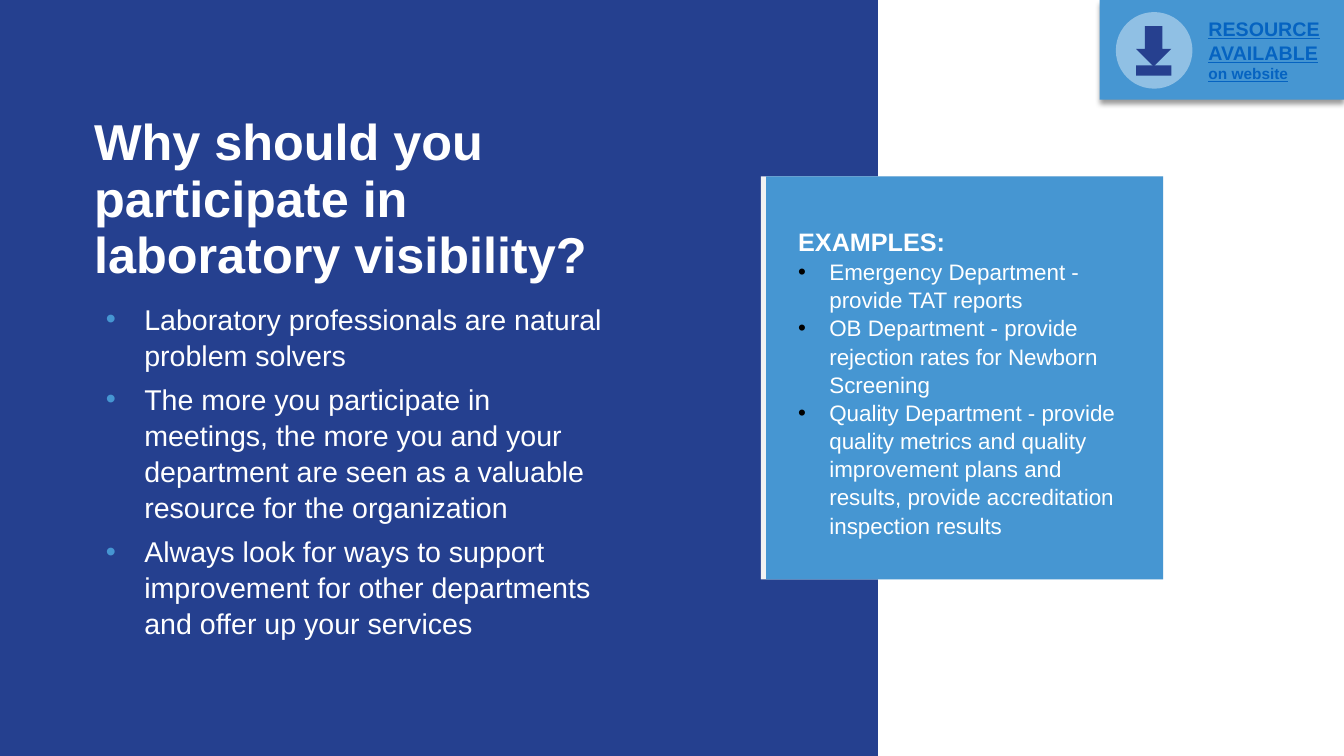
from dataclasses import dataclass
from lxml.etree import SubElement
from pptx import Presentation
from pptx.dml.color import RGBColor as Rgb
from pptx.enum.shapes import MSO_SHAPE as Kind
from pptx.enum.text import MSO_ANCHOR as Anchor
from pptx.oxml.ns import qn
from pptx.util import Inches, Pt


@dataclass(frozen=True)
class Theme:
    font: str = "Arial"
    navy: str = "25408F"
    icon: str = "26408F"
    sky: str = "4696D2"
    pale: str = "90C0E4"
    gray: str = "F2F2F2"
    white: str = "FFFFFF"
    black: str = "000000"
    link: str = "0563C1"
    title: float = 36
    body: float = 20.4
    head: float = 18
    item: float = 16
    tag: float = 14
    note: float = 11


class Deck:
    cols = 40

    def __init__(self, theme):
        self.theme = theme
        self.prs = Presentation()
        self.prs.slide_width = Inches(13.33)
        self.prs.slide_height = Inches(7.5)
        self.unit = self.prs.slide_width / self.cols
        self.slide = self.prs.slides.add_slide(self.prs.slide_layouts[5])
        self.host = self.slide.shapes

    def place(self, box):
        return [round(n * self.unit) for n in box]

    def style(self, run, size, color, bold=False, under=None):
        font = run.font
        font.name, font.size = self.theme.font, Pt(size)
        font.bold, font.underline = bold, under
        font.color.rgb = Rgb.from_string(color)

    def shape(self, kind, box, color):
        item = self.host.add_shape(kind, *self.place(box))
        item.shadow.inherit = False
        item.fill.solid()
        item.fill.fore_color.rgb = Rgb.from_string(color)
        item.line.fill.background()
        return item

    def shade(self, item):
        effects = item._element.spPr.find(qn("a:effectLst"))
        cast = SubElement(effects, qn("a:outerShdw"), blurRad=str(Pt(4)),
                          dist=str(Pt(3)), dir="5400000", rotWithShape="0")
        tint = SubElement(cast, qn("a:srgbClr"), val=self.theme.black)
        SubElement(tint, qn("a:alpha"), val="40000")

    def title(self, box, text):
        item = self.slide.shapes.title
        item.left, item.top, item.width, item.height = self.place(box)
        self.slide.shapes._spTree.append(item._element)
        frame = item.text_frame
        frame.text, frame.word_wrap = text, True
        frame.vertical_anchor = Anchor.MIDDLE
        para = frame.paragraphs[0]
        para.line_spacing = 0.94
        para._p.get_or_add_pPr().set("algn", "l")
        self.style(para.runs[0], self.theme.title, self.theme.white, True)

    def text(self, box, lines, anchor=Anchor.TOP):
        frame = self.host.add_textbox(*self.place(box)).text_frame
        frame.word_wrap = True
        frame.vertical_anchor = anchor
        frame.text = "\n".join(lines)
        return frame.paragraphs

    def bullet(self, para, left, hang, color):
        props = para._p.get_or_add_pPr()
        props.set("marL", str(Inches(left)))
        props.set("indent", str(-Inches(hang)))
        SubElement(SubElement(props, qn("a:buClr")), qn("a:srgbClr"), val=color)
        SubElement(props, qn("a:buFont"), typeface=self.theme.font)
        SubElement(props, qn("a:buChar"), char="•")

    def items(self, paras, size, left, hang, color):
        for para in paras:
            self.bullet(para, left, hang, color)
            para.line_spacing = 1.05
            self.style(para.runs[0], size, self.theme.white)


def main():
    look = Theme()
    deck = Deck(look)
    deck.shape(Kind.RECTANGLE, (0, 0, 26.13, 22.51), look.navy)
    deck.shape(Kind.RECTANGLE, (22.65, 5.25, 11.97, 12), look.gray)
    deck.shape(Kind.RECTANGLE, (22.8, 5.25, 11.82, 12), look.sky)

    deck.title((2.5, 3.78, 16.15, 4.35),
               "Why should you participate in laboratory visibility?")
    points = deck.text((2.5, 8.37, 16.15, 11.25), [
        "Laboratory professionals are natural problem solvers",
        "The more you participate in meetings, the more you and your "
        "department are seen as a valuable resource for the organization",
        "Always look for ways to support improvement for other departments "
        "and offer up your services"], Anchor.MIDDLE)
    deck.items(points, look.body, 0.5, 0.38, look.sky)
    for para in points[1:]:
        para.space_before = Pt(6)

    deck.host = deck.slide.shapes.add_group_shape().shapes
    deck.shade(deck.shape(Kind.RECTANGLE, (32.73, 0, 7.27, 2.97), look.sky))
    label = deck.text((35.67, 0.36, 4.05, 2.28),
                      ["RESOURCE AVAILABLE\von website"])[0]
    for run, size in zip(label.runs, (look.tag, look.note)):
        deck.style(run, size, look.link, True, True)
    deck.shape(Kind.OVAL, (33.21, 0.36, 2.28, 2.28), look.pale)
    deck.shape(Kind.DOWN_ARROW, (33.81, 0.78, 1.05, 1.2), look.icon)
    deck.shape(Kind.RECTANGLE, (33.81, 1.95, 1.05, 0.3), look.icon)

    deck.host = deck.slide.shapes
    head, *cases = deck.text((23.46, 6.6, 10.41, 9.3), [
        "EXAMPLES:",
        "Emergency Department - provide TAT reports",
        "OB Department - provide rejection rates for Newborn Screening",
        "Quality Department - provide quality metrics and quality improvement "
        "plans and results, provide accreditation inspection results"])
    deck.style(head.runs[0], look.head, look.white, True)
    deck.items(cases, look.item, 0.31, 0.31, look.black)
    deck.prs.save("out.pptx")


if __name__ == "__main__":
    main()
